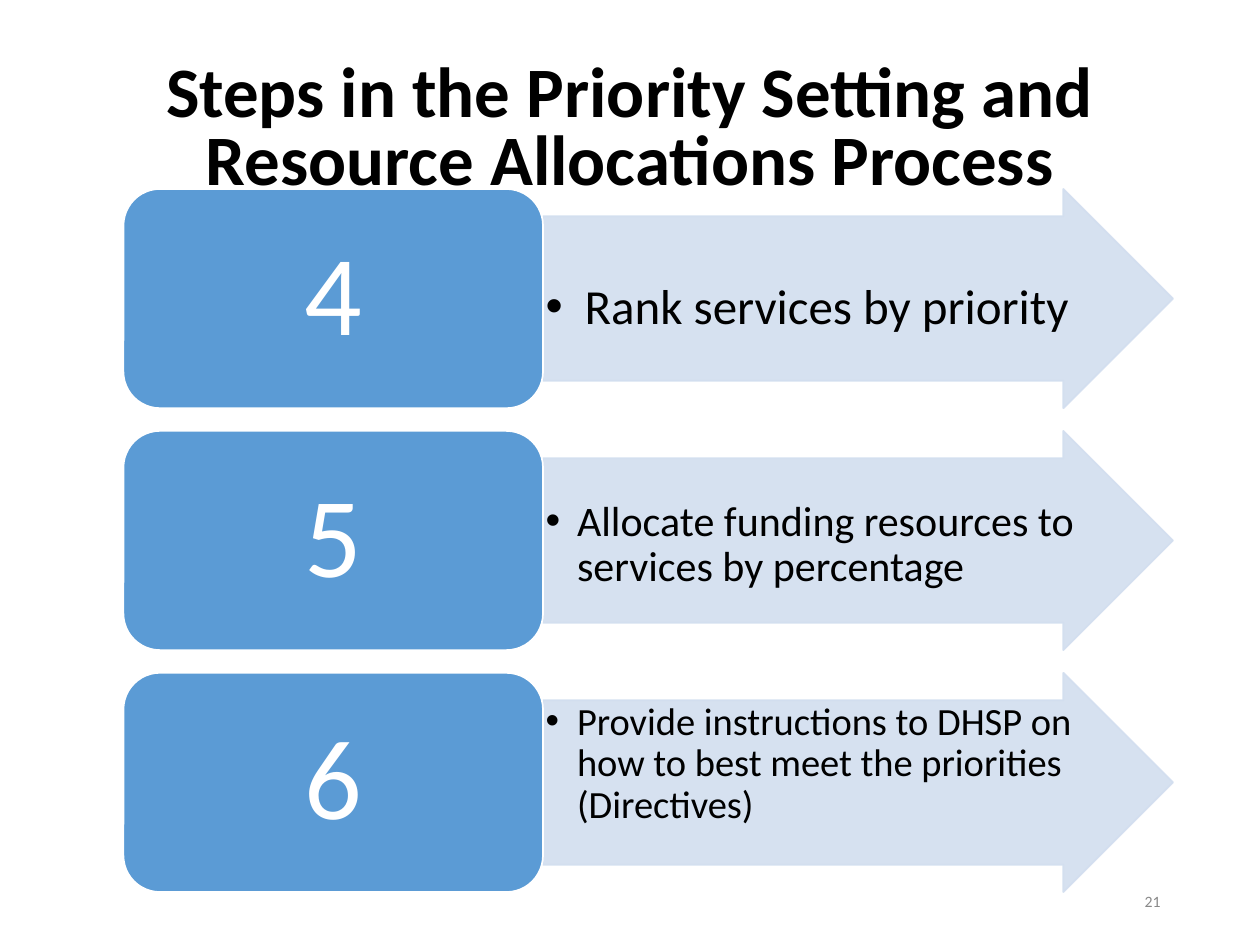
from lxml import etree
from pptx import Presentation
from pptx.dml.color import RGBColor
from pptx.enum import shapes, text
from pptx.oxml.ns import qn
from pptx.util import Inches, Pt


def color(value):
    return RGBColor.from_string(value)


def write(shape, words, size, hue, align, anchor, spacing=1.0, bold=False):
    """Fill a shape with one formatted paragraph and return the paragraph."""
    frame = shape.text_frame
    frame.word_wrap = True
    frame.vertical_anchor = anchor
    frame.text = words
    paragraph = frame.paragraphs[0]
    paragraph.alignment = align
    paragraph.line_spacing = spacing
    font = paragraph.runs[0].font
    font.name, font.size, font.bold = "Calibri", Pt(size), bold
    font.color.rgb = color(hue)
    return paragraph


presentation = Presentation()
presentation.slide_width, presentation.slide_height = Inches(10), Inches(7.5)
slide = presentation.slides.add_slide(presentation.slide_layouts[6])
CENTER, LEFT, RIGHT = text.PP_ALIGN.CENTER, text.PP_ALIGN.LEFT, text.PP_ALIGN.RIGHT
MIDDLE, TOP = text.MSO_ANCHOR.MIDDLE, text.MSO_ANCHOR.TOP

# Slide number and title
number_box = slide.shapes.add_textbox(Inches(7.06), Inches(6.95), Inches(2.25), Inches(0.4))
write(number_box, "21", 9, "898989", RIGHT, MIDDLE)
title = slide.shapes.add_textbox(Inches(0.69), Inches(0.42), Inches(8.62), Inches(1.24))
write(title, "Steps in the Priority Setting and Resource Allocations Process",
      40.5, "000000", CENTER, MIDDLE, 0.8, True)

# Steps: number, wording, text size, hanging indent, text offset from the row top
steps = [
    ("4", "Rank services by priority", 28, 0.31, 0.72),
    ("5", "Allocate funding resources to services by percentage", 24, 0.25, 0.53),
    ("6", "Provide instructions to DHSP on how to best meet the priorities (Directives)",
     22, 0.25, 0.21),
]
FIRST_TOP, PITCH, HEIGHT = 1.5, 1.92, 1.74
SPLIT = 4.31

for row, (number, words, size, indent, offset) in enumerate(steps):
    top = FIRST_TOP + row * PITCH

    # Arrow, slightly transparent
    arrow = slide.shapes.add_shape(shapes.MSO_SHAPE.RIGHT_ARROW, Inches(SPLIT), Inches(top),
                                   Inches(5), Inches(HEIGHT))
    arrow.adjustments[0], arrow.adjustments[1] = 0.75, 0.5
    arrow.shadow.inherit = False
    arrow.fill.solid()
    arrow.fill.fore_color.rgb = color("D2DEEF")
    arrow.line.color.rgb = color("D2DEEF")
    arrow.line.width = Pt(1)
    for swatch in arrow.element.spPr.iter(qn("a:srgbClr")):
        etree.SubElement(swatch, qn("a:alpha"), val="90000")

    # Bulleted wording on the arrow
    label = slide.shapes.add_textbox(Inches(SPLIT), Inches(top + offset),
                                     Inches(4.35), Inches(1.52 - offset))
    frame = label.text_frame
    frame.margin_left = frame.margin_right = Inches(0.02)
    frame.margin_top = frame.margin_bottom = Inches(0.02)
    paragraph = write(label, words, size, "000000", LEFT, TOP, 0.9)
    properties = paragraph._p.get_or_add_pPr()
    properties.set("marL", str(Inches(indent)))
    properties.set("indent", str(-Inches(indent)))
    etree.SubElement(properties, qn("a:buFont"), typeface="Arial")
    etree.SubElement(properties, qn("a:buChar"), char="•")

    # Number block
    block = slide.shapes.add_shape(shapes.MSO_SHAPE.ROUNDED_RECTANGLE, Inches(0.98), Inches(top),
                                   Inches(SPLIT - 0.98), Inches(HEIGHT))
    block.shadow.inherit = False
    block.fill.solid()
    block.fill.fore_color.rgb = color("5B9BD5")
    block.line.color.rgb = color("FFFFFF")
    block.line.width = Pt(1)
    write(block, number, 65, "FFFFFF", CENTER, MIDDLE, 0.9)

presentation.save("out.pptx")
